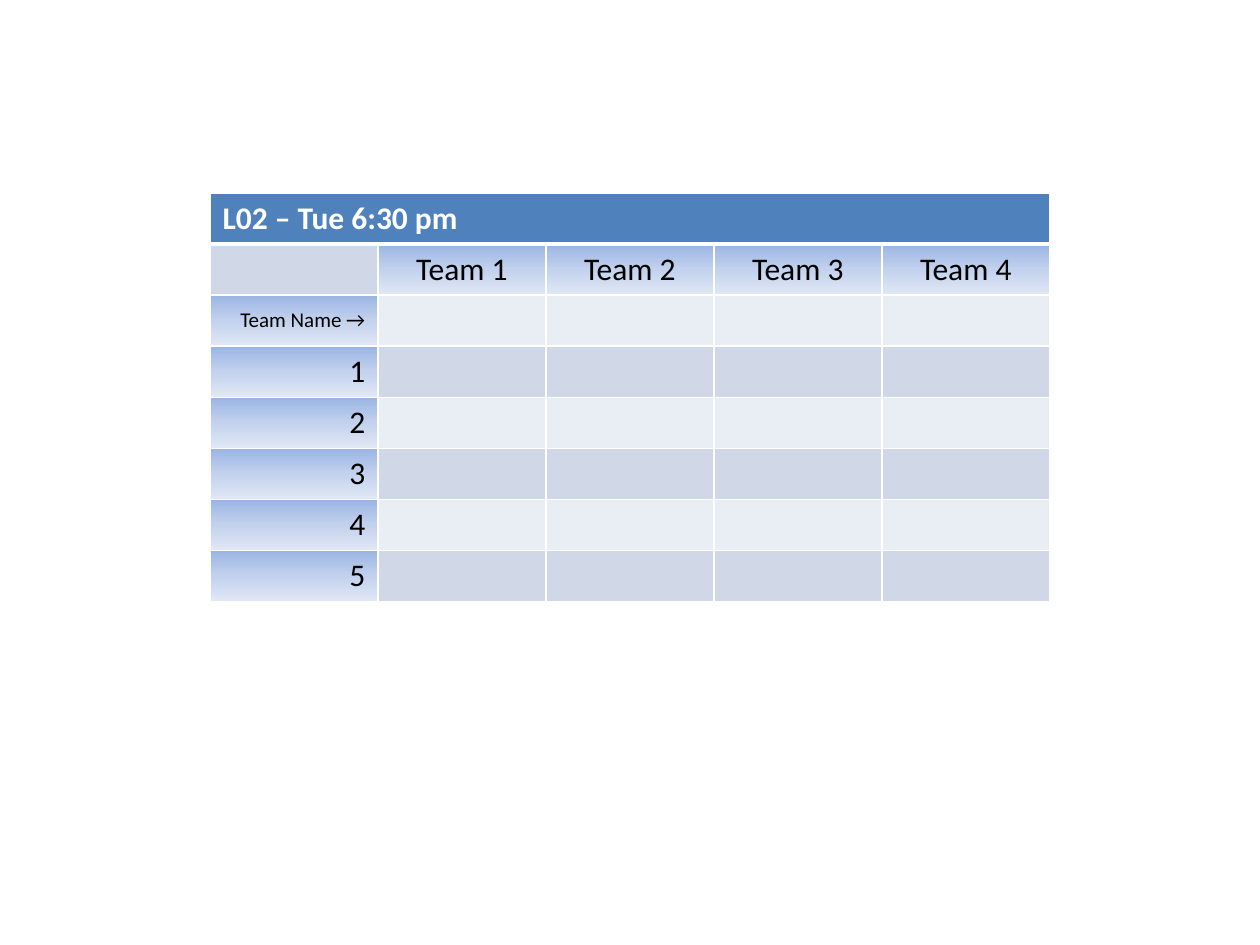
from lxml.etree import SubElement
from pptx import Presentation
from pptx.dml.color import RGBColor
from pptx.enum.text import MSO_ANCHOR, PP_ALIGN
from pptx.oxml.ns import qn
from pptx.util import Pt

WHITE = RGBColor(0xFF, 0xFF, 0xFF)
BLACK = RGBColor(0x00, 0x00, 0x00)
HEADER_BLUE = RGBColor(0x4F, 0x81, 0xBD)
BAND_DARK = RGBColor(0xD0, 0xD8, 0xE8)
BAND_LIGHT = RGBColor(0xE9, 0xED, 0xF4)
LABEL_GRADIENT = [
    (0, RGBColor(0x9A, 0xB5, 0xE4)),
    (50, RGBColor(0xC2, 0xD1, 0xED)),
    (100, RGBColor(0xE1, 0xE8, 0xF5)),
]

TEAMS = 4
MEMBERS = 5
COLUMN_WIDTH = 96
ROW_HEIGHT = 29.2


class SlideBuilder:
    def __init__(self, slide, font="Calibri", size=18):
        self.slide = slide
        self.font = font
        self.size = size

    def table(self, left, top, rows, columns):
        frame = self.slide.shapes.add_table(
            rows, columns, Pt(left), Pt(top),
            Pt(columns * COLUMN_WIDTH), Pt(rows * ROW_HEIGHT))
        for column in frame.table.columns:
            column.width = Pt(COLUMN_WIDTH)
        for row in frame.table.rows:
            row.height = Pt(ROW_HEIGHT)
        return frame.table

    def borders(self, cell, top=1, bottom=1):
        properties = cell._tc.get_or_add_tcPr()
        for side, width in (("L", 1), ("R", 1), ("T", top), ("B", bottom)):
            line = SubElement(properties, qn(f"a:ln{side}"), w=str(Pt(width)))
            fill = SubElement(line, qn("a:solidFill"))
            SubElement(fill, qn("a:srgbClr"), val=str(WHITE))

    def solid(self, cell, color):
        cell.fill.solid()
        cell.fill.fore_color.rgb = color

    def gradient(self, cell):
        """Fill a label cell from top to bottom with the three-stop gradient."""
        properties = cell._tc.get_or_add_tcPr()
        fill = SubElement(properties, qn("a:gradFill"), rotWithShape="1")
        stops = SubElement(fill, qn("a:gsLst"))
        for percent, color in LABEL_GRADIENT:
            stop = SubElement(stops, qn("a:gs"), pos=str(percent * 1000))
            SubElement(stop, qn("a:srgbClr"), val=str(color))
        SubElement(fill, qn("a:lin"), ang=str(90 * 60000), scaled="0")

    def text(self, cell, text, align, color=BLACK, bold=False, size=None):
        paragraph = cell.text_frame.paragraphs[0]
        paragraph.alignment = align
        run = paragraph.add_run()
        run.text = text
        run.font.name = self.font
        run.font.size = Pt(size or self.size)
        run.font.bold = bold
        run.font.color.rgb = color


def add_team_table(builder):
    rows, columns = MEMBERS + 3, TEAMS + 1
    table = builder.table(120, 110.2, rows, columns)
    table.cell(0, 0).merge(table.cell(0, columns - 1))

    for row in range(rows):
        for column in range(columns):
            cell = table.cell(row, column)
            builder.borders(cell, top=3 if row == 1 else 1,
                            bottom=3 if row == 0 else 1)
            if row == 0:
                builder.solid(cell, HEADER_BLUE)
            elif (row == 1) != (column == 0):
                builder.gradient(cell)
            else:
                builder.solid(cell, BAND_DARK if row % 2 else BAND_LIGHT)

    builder.text(table.cell(0, 0), "L02 – Tue 6:30 pm", PP_ALIGN.LEFT, WHITE, bold=True)
    for team in range(1, TEAMS + 1):
        builder.text(table.cell(1, team), f"Team {team}", PP_ALIGN.CENTER)
    name_label = table.cell(2, 0)
    name_label.vertical_anchor = MSO_ANCHOR.MIDDLE
    builder.text(name_label, "Team Name →", PP_ALIGN.RIGHT, size=12)
    for member in range(1, MEMBERS + 1):
        builder.text(table.cell(member + 2, 0), str(member), PP_ALIGN.RIGHT)


def main():
    presentation = Presentation()
    presentation.slide_width = Pt(720)
    presentation.slide_height = Pt(540)
    slide = presentation.slides.add_slide(presentation.slide_layouts[6])
    add_team_table(SlideBuilder(slide))
    presentation.save("out.pptx")


if __name__ == "__main__":
    main()
